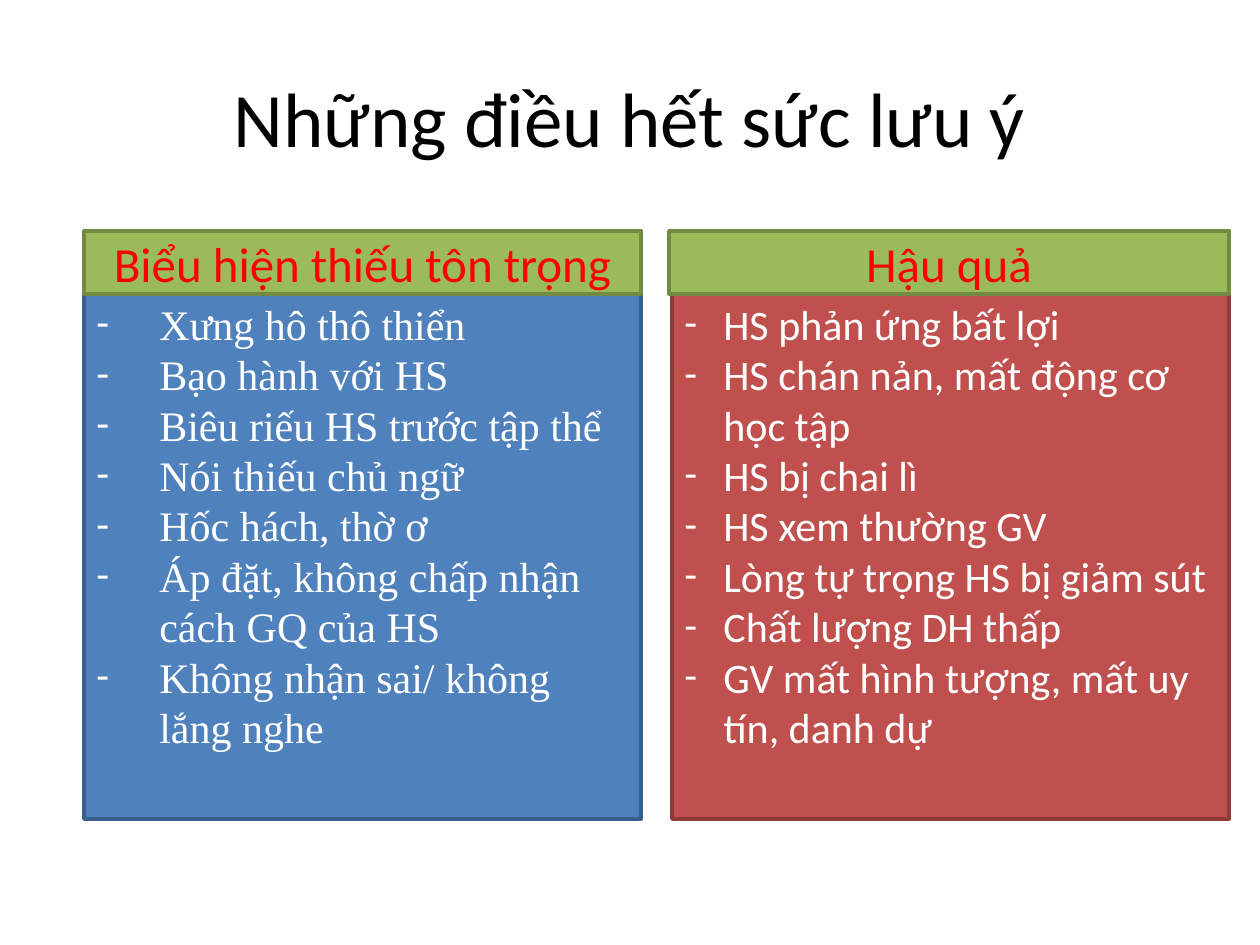
from lxml.etree import SubElement
from pptx import Presentation
from pptx.dml.color import RGBColor
from pptx.enum.shapes import MSO_SHAPE as Kind
from pptx.enum.text import MSO_ANCHOR as Anchor, PP_ALIGN as Align
from pptx.oxml.ns import qn
from pptx.util import Pt

SCALE = 914400 / 126
TOP = 231
SIGNS = [
    "Xưng hô thô thiển",
    "Bạo hành với HS",
    "Biêu riếu HS trước tập thể",
    "Nói thiếu chủ ngữ",
    "Hốc hách, thờ ơ",
    "Áp đặt, không chấp nhận cách GQ của HS",
    "Không nhận sai/ không lắng nghe",
]
RESULTS = [
    "HS phản ứng bất lợi",
    "HS chán nản, mất động cơ học tập",
    "HS bị chai lì",
    "HS xem thường GV",
    "Lòng tự trọng HS bị giảm sút",
    "Chất lượng DH thấp",
    "GV mất hình tượng, mất uy tín, danh dự",
]


def px(n):
    """Turn pixels into EMU."""
    return round(n * SCALE)


def rgb(code):
    """Turn a hex string into a colour."""
    return RGBColor.from_string(code)


def dash(para, indent):
    """Give a paragraph a dash bullet with a hanging indent."""
    props = para._p.get_or_add_pPr()
    props.set("marL", str(px(indent)))
    props.set("indent", str(-px(indent)))
    SubElement(props, qn("a:buFont"), typeface="Calibri")
    SubElement(props, qn("a:buChar"), char="-")


def write(shape, lines, size=24, font="Calibri", color="FFFFFF",
          align=Align.CENTER, indent=0):
    """Fill a shape with formatted paragraphs."""
    frame = shape.text_frame
    frame.word_wrap = True
    frame.vertical_anchor = Anchor.MIDDLE
    frame.text = "\n".join(lines)
    for para in frame.paragraphs:
        para.alignment = align
        if indent:
            dash(para, indent)
        for run in para.runs:
            run.font.size = Pt(size)
            run.font.name = font
            run.font.color.rgb = rgb(color)


def box(slide, left, width, height, fill, line):
    """Add an outlined rectangle that starts at the common top."""
    shape = slide.shapes.add_shape(
        Kind.RECTANGLE, px(left), px(TOP), px(width), px(height))
    shape.shadow.inherit = False
    shape.fill.solid()
    shape.fill.fore_color.rgb = rgb(fill)
    shape.line.color.rgb = rgb(line)
    shape.line.width = Pt(2)
    return shape


def panel(slide, left, lines, fill, line, **style):
    """Add a tall box with a dashed list."""
    shape = box(slide, left, 557, 588, fill, line)
    write(shape, lines, align=Align.LEFT, **style)


def header(slide, left, width, text):
    """Add a green heading bar."""
    shape = box(slide, left, width, 63, "9BBB59", "738A42")
    write(shape, [text], size=28, color="FF0000")


def main():
    """Build and save the slide."""
    deck = Presentation()
    deck.slide_width, deck.slide_height = px(1260), px(945)
    slide = deck.slides.add_slide(deck.slide_layouts[5])
    title = slide.shapes.title
    title.left, title.top = px(63), px(38)
    title.width, title.height = px(1134), px(157)
    write(title, ["Những điều hết sức lưu ý"], size=44, color="000000")
    panel(slide, 84, SIGNS, "4F81BD", "3A5F8C",
          font="Times New Roman", indent=63)
    panel(slide, 672, RESULTS, "C0504D", "8E3B39", indent=39)
    header(slide, 84, 557, "Biểu hiện thiếu tôn trọng")
    header(slide, 669, 560, "Hậu quả")
    deck.save("out.pptx")


if __name__ == "__main__":
    main()
